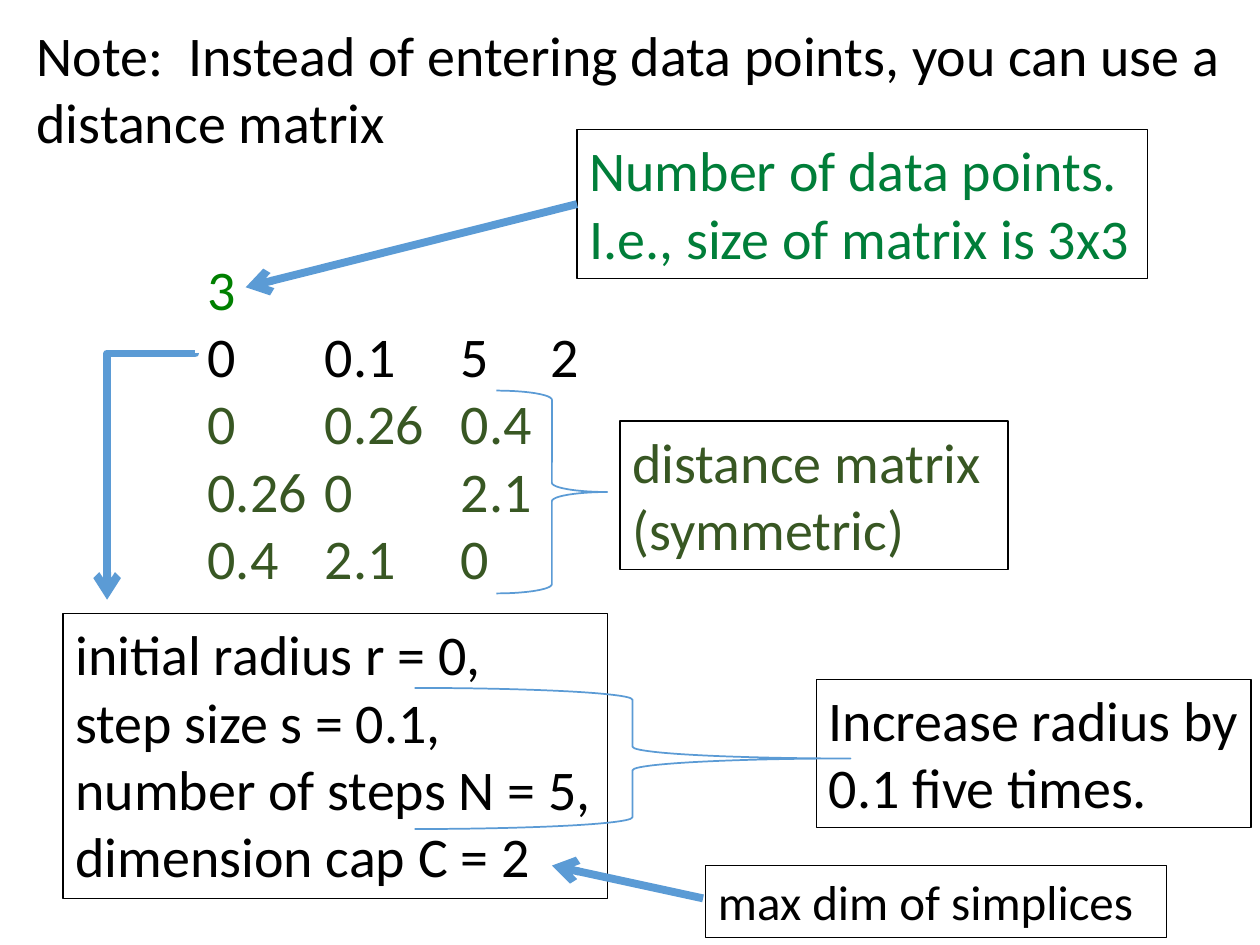
"""Build a slide explaining the distance matrix input format."""
from dataclasses import dataclass

from lxml.etree import SubElement
from pptx import Presentation
from pptx.dml.color import RGBColor
from pptx.enum.shapes import MSO_CONNECTOR, MSO_SHAPE
from pptx.enum.text import MSO_ANCHOR, PP_ALIGN
from pptx.oxml.ns import qn
from pptx.util import Inches, Pt

BLACK = RGBColor(0x00, 0x00, 0x00)
BLUE = RGBColor(0x5B, 0x9B, 0xD5)
GREEN = RGBColor(0x00, 0x80, 0x00)
SEA_GREEN = RGBColor(0x00, 0x7E, 0x39)
OLIVE = RGBColor(0x38, 0x57, 0x23)
FONT = "Calibri"
COLUMN_STOPS = (0.93, 2.01, 2.72)


@dataclass(frozen=True)
class Area:
    left: float
    top: float
    width: float
    height: float

    def lengths(self):
        return [Inches(value) for value in (self.left, self.top, self.width, self.height)]


@dataclass(frozen=True)
class Note:
    area: Area
    lines: tuple[str, ...]
    color: RGBColor = BLACK
    size: int = 32


@dataclass(frozen=True)
class Arrow:
    start: tuple[float, float]
    end: tuple[float, float]


TITLE = "Note:  Instead of entering data points, you can use a distance matrix"
MATRIX_AREA = Area(1.55, 1.97, 5, 2.79)
MATRIX_ROWS = (
    (("3",), GREEN),
    (("0", "0.1", "5", "2"), BLACK),
    (("0", "0.26", "0.4"), OLIVE),
    (("0.26", "0", "2.1"), OLIVE),
    (("0.4", "2.1", "0"), OLIVE),
)
NOTES = (
    Note(Area(4.92, 3.34, 3.08, 1.18), ("distance matrix (symmetric)",), OLIVE),
    Note(Area(4.58, 1.03, 4.53, 1.18),
         ("Number of data points.", "I.e., size of matrix is 3x3"), SEA_GREEN),
    Note(Area(0.5, 4.87, 4.32, 2.26),
         ("initial radius r = 0,", "step size s = 0.1,",
          "number of steps N = 5,", "dimension cap C = 2")),
    Note(Area(6.48, 5.39, 3.45, 1.18), ("Increase radius by 0.1 five times.",)),
    Note(Area(5.6, 6.87, 3.66, 0.57), ("max dim of simplices",), size=28),
)
BRACES = (Area(3.94, 3.1, 0.88, 1.61), Area(3.29, 5.46, 3.46, 1.12))
ARROWS = (Arrow((4.58, 1.62), (1.95, 2.28)), Arrow((5.58, 7.13), (4.38, 6.87)))
SETTINGS_ARROW = Arrow((1.55, 2.8), (0.85, 4.76))


def write(frame, text: str, *, first: bool, color: RGBColor = BLACK, size: int = 32):
    """Write one formatted paragraph into a text frame and return it."""
    frame.word_wrap = True
    frame.vertical_anchor = MSO_ANCHOR.TOP
    para = frame.paragraphs[0] if first else frame.add_paragraph()
    para.alignment = PP_ALIGN.LEFT
    span = para.add_run()
    span.text = text
    span.font.name = FONT
    span.font.size = Pt(size)
    span.font.color.rgb = color
    return para


def draw_title(slide) -> None:
    """Fill the title placeholder."""
    title = slide.shapes.title
    title.left, title.top, title.width, title.height = Area(0.19, 0.11, 9.67, 1.18).lengths()
    write(title.text_frame, TITLE, first=True)


def draw_matrix(slide) -> None:
    """Draw the input file with its columns on tab stops."""
    box = slide.shapes.add_textbox(*MATRIX_AREA.lengths())
    for index, (cells, color) in enumerate(MATRIX_ROWS):
        para = write(box.text_frame, "\t".join(cells), first=index == 0, color=color)
        stops = SubElement(para._p.get_or_add_pPr(), qn("a:tabLst"))
        for stop in COLUMN_STOPS:
            SubElement(stops, qn("a:tab"), pos=str(Inches(stop)), algn="l")


def draw_note(slide, note: Note) -> None:
    """Draw a framed text box."""
    box = slide.shapes.add_textbox(*note.area.lengths())
    box.line.color.rgb = BLACK
    box.line.width = Pt(0.75)
    for index, line in enumerate(note.lines):
        write(box.text_frame, line, first=index == 0, color=note.color, size=note.size)


def draw_brace(slide, area: Area) -> None:
    """Draw a thin right brace."""
    brace = slide.shapes.add_shape(MSO_SHAPE.RIGHT_BRACE, *area.lengths())
    brace.shadow.inherit = False
    brace.fill.background()
    brace.line.color.rgb = BLUE
    brace.line.width = Pt(1)


def draw_arrow(slide, arrow: Arrow, kind: MSO_CONNECTOR = MSO_CONNECTOR.STRAIGHT):
    """Draw a thick connector with an open arrowhead and return it."""
    points = [Inches(value) for value in (*arrow.start, *arrow.end)]
    connector = slide.shapes.add_connector(kind, *points)
    connector.line.color.rgb = BLUE
    connector.line.width = Pt(4.5)
    SubElement(connector.line._get_or_add_ln(), qn("a:tailEnd"), type="arrow")
    SubElement(connector._element.spPr, qn("a:effectLst"))
    return connector


def draw_corner_arrow(slide, arrow: Arrow) -> None:
    """Draw an arrow that runs left and then down, as a quarter-turned elbow."""
    (start_x, start_y), (end_x, end_y) = arrow.start, arrow.end
    middle_x, middle_y = (start_x + end_x) / 2, (start_y + end_y) / 2
    half_run, half_rise = (end_y - start_y) / 2, (start_x - end_x) / 2
    turned = Arrow((middle_x - half_run, middle_y - half_rise),
                   (middle_x + half_run, middle_y + half_rise))
    properties = draw_arrow(slide, turned, MSO_CONNECTOR.ELBOW)._element.spPr
    properties.find(qn("a:xfrm")).set("rot", "5400000")
    guides = properties.find(qn("a:prstGeom")).find(qn("a:avLst"))
    SubElement(guides, qn("a:gd"), name="adj1", fmla="val 300")


def main() -> None:
    """Build and save the deck."""
    deck = Presentation()
    deck.slide_width, deck.slide_height = Inches(10), Inches(7.5)
    slide = deck.slides.add_slide(deck.slide_layouts[5])
    draw_title(slide)
    draw_matrix(slide)
    for note in NOTES:
        draw_note(slide, note)
    for area in BRACES:
        draw_brace(slide, area)
    for arrow in ARROWS:
        draw_arrow(slide, arrow)
    draw_corner_arrow(slide, SETTINGS_ARROW)
    deck.save("out.pptx")


if __name__ == "__main__":
    main()
